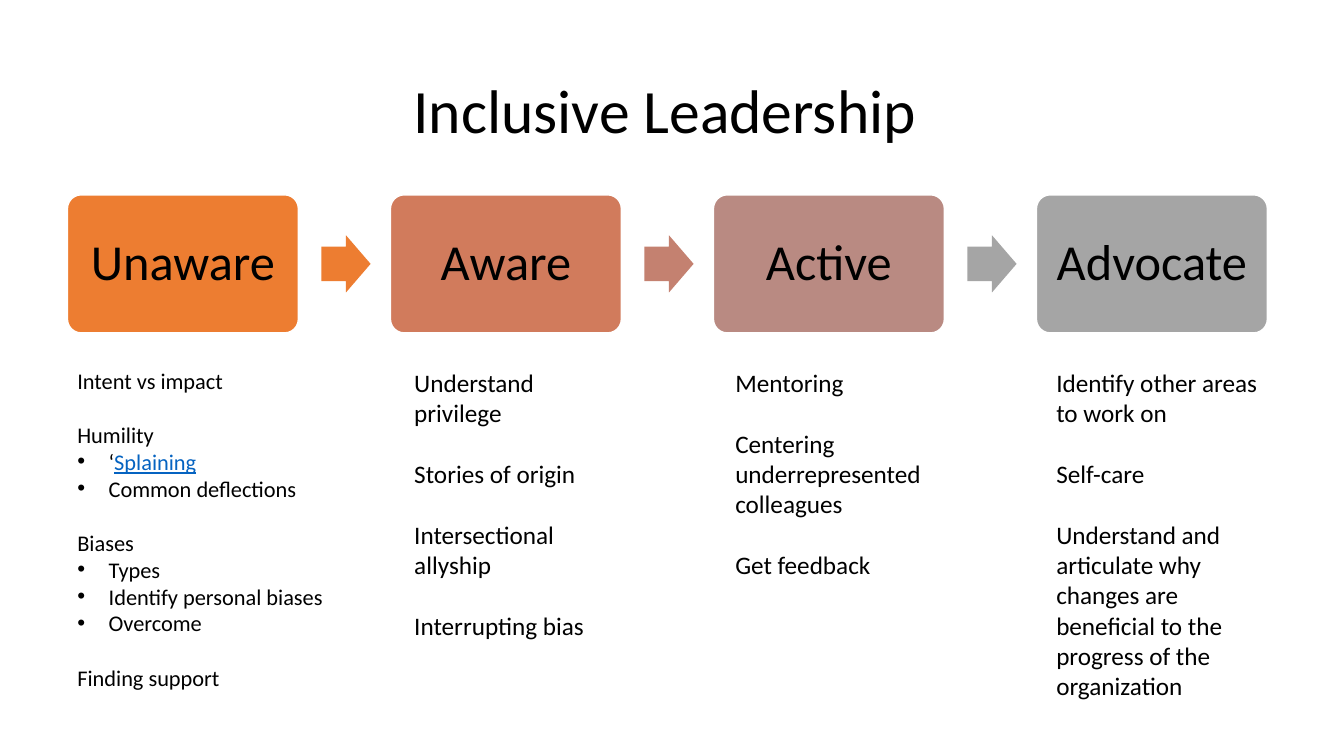
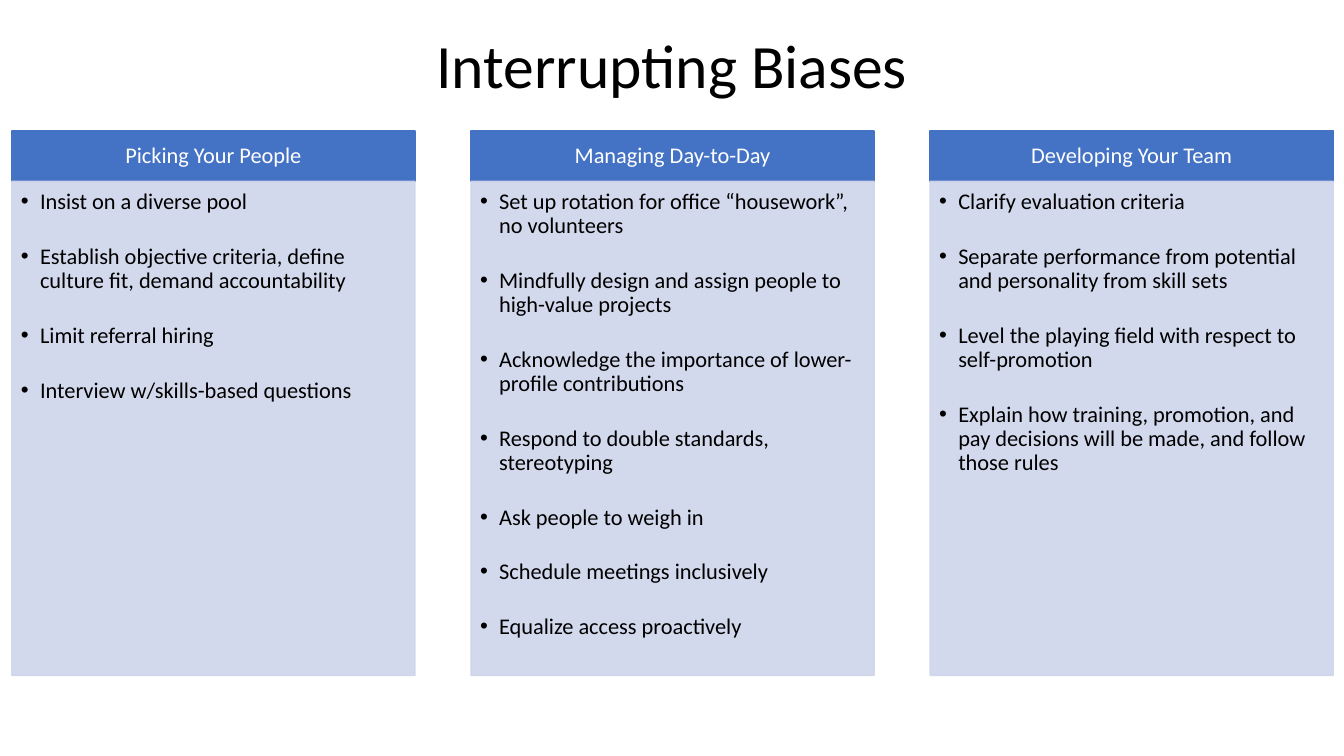
"""Build two slides on inclusive leadership and interrupting biases."""
import lxml.etree
import pptx
import pptx.dml.color
import pptx.enum.shapes
import pptx.enum.text
import pptx.oxml.ns
import pptx.util

Cm = pptx.util.Cm
Pt = pptx.util.Pt
qn = pptx.oxml.ns.qn
SHAPE = pptx.enum.shapes.MSO_SHAPE
ALIGN = pptx.enum.text.PP_ALIGN
ANCHOR = pptx.enum.text.MSO_ANCHOR

COLOURS = {
    "text": "000000",
    "white": "FFFFFF",
    "link": "0563C1",
    "header": "4472C4",
    "panel": "CFD5EA",
    "orange": "ED7D31",
    "terracotta": "D17B5C",
    "clay": "C48170",
    "rose": "B98A82",
    "grey": "A5A5A5",
}

STAGES = [
    ("Unaware", "orange", "orange", 16, [
        ["Intent vs impact"],
        ["Humility", ("‘", "Splaining"), "Common deflections"],
        ["Biases", "Types", "Identify personal biases", "Overcome"],
        ["Finding support"],
    ]),
    ("Aware", "terracotta", "clay", 18, [
        ["Understand privilege"],
        ["Stories of origin"],
        ["Intersectional allyship"],
        ["Interrupting bias"],
    ]),
    ("Active", "rose", "grey", 18, [
        ["Mentoring"],
        ["Centering underrepresented colleagues"],
        ["Get feedback"],
    ]),
    ("Advocate", "grey", None, 18, [
        ["Identify other areas to work on"],
        ["Self-care"],
        ["Understand and articulate why changes are beneficial "
         "to the progress of the organization"],
    ]),
]

PANELS = [
    ("Picking Your People", [
        "Insist on a diverse pool",
        "Establish objective criteria, define culture fit, demand accountability",
        "Limit referral hiring",
        "Interview w/skills-based questions",
    ]),
    ("Managing Day-to-Day", [
        "Set up rotation for office “housework”, no volunteers",
        "Mindfully design and assign people to high-value projects",
        "Acknowledge the importance of lower-profile contributions",
        "Respond to double standards, stereotyping",
        "Ask people to weigh in",
        "Schedule meetings inclusively",
        "Equalize access proactively",
    ]),
    ("Developing Your Team", [
        "Clarify evaluation criteria",
        "Separate performance from potential and personality from skill sets",
        "Level the playing field with respect to self-promotion",
        "Explain how training, promotion, and pay decisions will be made, "
        "and follow those rules",
    ]),
]


class Slides:
    font = "Calibri"

    def __init__(self):
        self.deck = pptx.Presentation()
        self.deck.slide_width = Cm(33.87)
        self.deck.slide_height = Cm(19.05)
        self.page = None

    def colour(self, name):
        return pptx.dml.color.RGBColor.from_string(COLOURS[name])

    def add_page(self, title, top, height):
        self.page = self.deck.slides.add_slide(self.deck.slide_layouts[6])
        frame = self.text_box(2.33, top, 29.21, height)
        frame.vertical_anchor = ANCHOR.MIDDLE
        self.paragraph(frame, title, 44, align=ALIGN.CENTER, spacing=0.9)

    def text_box(self, left, top, width, height):
        box = self.page.shapes.add_textbox(Cm(left), Cm(top), Cm(width), Cm(height))
        box.text_frame.word_wrap = True
        return box.text_frame

    def shape(self, kind, left, top, width, height, fill, line=None, opacity=100):
        shape = self.page.shapes.add_shape(
            kind, Cm(left), Cm(top), Cm(width), Cm(height))
        shape.shadow.inherit = False
        shape.fill.solid()
        shape.fill.fore_color.rgb = self.colour(fill)
        if line:
            shape.line.color.rgb = self.colour(line)
            shape.line.width = Pt(1)
        else:
            shape.line.fill.background()
        if opacity < 100:
            for tone in list(shape._element.spPr.iter(qn("a:srgbClr"))):
                lxml.etree.SubElement(tone, qn("a:alpha"), val=str(opacity * 1000))
        return shape

    def frame(self, shape, insets, anchor=ANCHOR.MIDDLE):
        frame = shape.text_frame
        frame.word_wrap = True
        frame.vertical_anchor = anchor
        (frame.margin_left, frame.margin_top,
         frame.margin_right, frame.margin_bottom) = map(Cm, insets)
        return frame

    def paragraph(self, frame, text, size, colour="text", align=ALIGN.LEFT,
                  spacing=1.0, before=0, indent=0):
        para = frame.paragraphs[0]
        if para.runs:
            para = frame.add_paragraph()
            para.space_before = Pt(before)
        para.alignment = align
        para.line_spacing = spacing
        if indent:
            props = para._p.get_or_add_pPr()
            props.set("marL", str(Cm(indent)))
            props.set("indent", str(-Cm(indent)))
            lxml.etree.SubElement(props, qn("a:buFont"), typeface="Arial")
            lxml.etree.SubElement(props, qn("a:buChar"), char="•")
        plain, linked = text if isinstance(text, tuple) else (text, "")
        self.span(para, plain, size, colour)
        if linked:
            self.span(para, linked, size, "link").font.underline = True

    def span(self, para, text, size, colour):
        span = para.add_run()
        span.text = text
        span.font.name = self.font
        span.font.size = Pt(size)
        span.font.color.rgb = self.colour(colour)
        return span

    def stage(self, left, label, fill):
        box = self.shape(SHAPE.ROUNDED_RECTANGLE, left, 4.91, 5.82, 3.48, fill, "white")
        box.adjustments[0] = 0.1
        self.paragraph(self.frame(box, [0.35] * 4), label, 36,
                       align=ALIGN.CENTER, spacing=0.9)

    def arrow(self, left, fill):
        arrow = self.shape(SHAPE.RIGHT_ARROW, left, 5.93, 1.24, 1.44, fill)
        arrow.adjustments[0] = 0.6
        arrow.adjustments[1] = 0.5

    def topics(self, left, width, size, groups):
        frame = self.text_box(left, 9.12, width, 8.71)
        for heading, *points in groups:
            self.paragraph(frame, heading, size, before=size * 1.22)
            for point in points:
                self.paragraph(frame, point, size, indent=0.79)

    def panel(self, left, heading, points):
        header = self.shape(SHAPE.RECTANGLE, left, 3.3, 10.16, 1.27, "header", "header")
        self.paragraph(self.frame(header, [0.3, 0.18, 0.3, 0.18]), heading, 16,
                       "white", ALIGN.CENTER, 0.9)
        body = self.shape(SHAPE.RECTANGLE, left, 4.57, 10.16, 12.45,
                          "panel", "panel", opacity=90)
        frame = self.frame(body, [0.23, 0.23, 0.3, 0.36], ANCHOR.TOP)
        for point in points:
            self.paragraph(frame, point, 16, spacing=0.9, before=21.8, indent=0.48)


def main():
    slides = Slides()
    slides.add_page("Inclusive Leadership ", 1.02, 3.68)
    for index, (label, fill, arrow_fill, size, groups) in enumerate(STAGES):
        left = 1.7 + 8.14 * index
        slides.stage(left, label, fill)
        if arrow_fill:
            slides.arrow(left + 6.4, arrow_fill)
        if index:
            slides.topics(2.1 + 8.09 * index, 5.69, size, groups)
        else:
            slides.topics(left, 6.86, size, groups)

    slides.add_page("Interrupting Biases", 0.2, 3.07)
    for index, (heading, points) in enumerate(PANELS):
        slides.panel(0.3 + 11.57 * index, heading, points)
    slides.deck.save("out.pptx")


if __name__ == "__main__":
    main()
